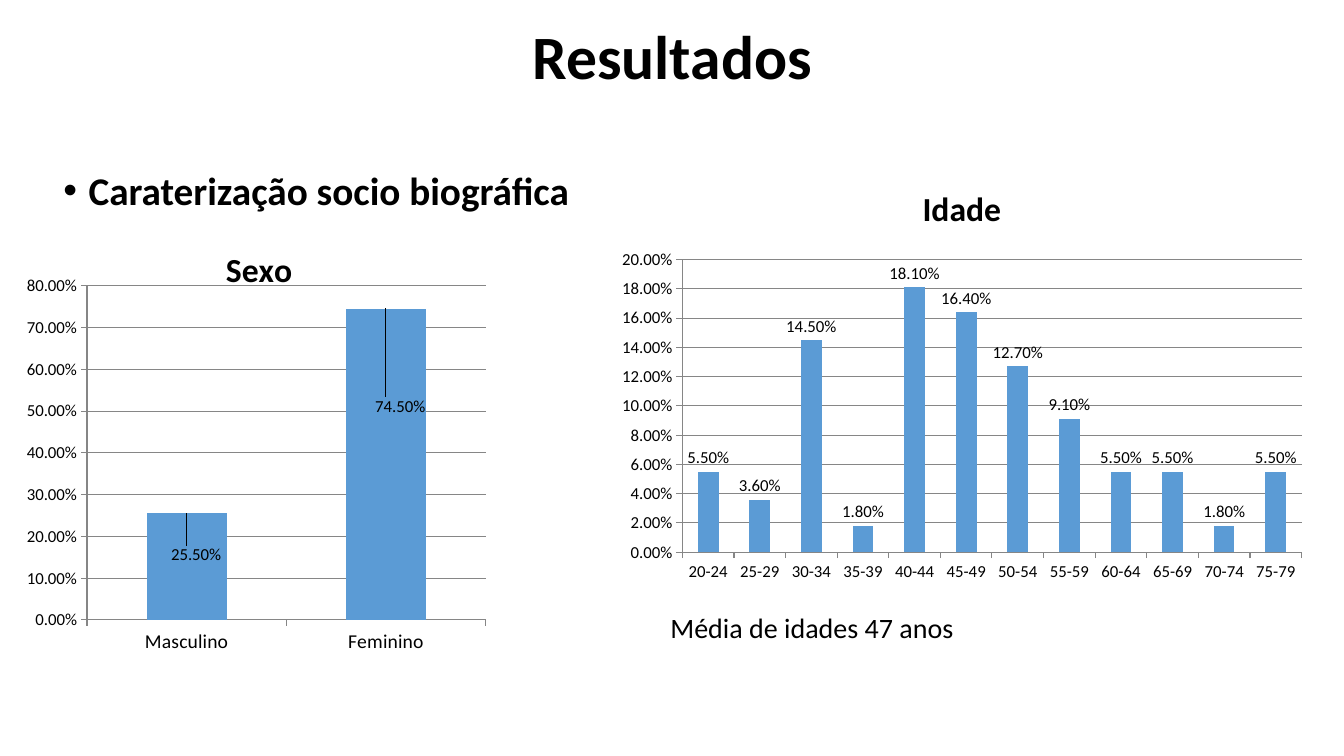
"""Builds the results slide: sex and age charts with a heading and a mean-age note."""
from lxml import etree
from pptx import Presentation, util as u
from pptx.chart.data import CategoryChartData
from pptx.dml.color import RGBColor
from pptx.enum import chart as ch, text
from pptx.oxml import parse_xml
from pptx.oxml.ns import nsdecls, qn

FONT, BLACK, BAR, GRID = "Calibri", "000000", "5B9BD5", "868686"
TITLE = ("Resultados", (0.92, 0.16, 11.5, 0.87), 44, True)
HEADING = ("Caraterização socio biográfica", (0.53, 1.65, 11.88, 0.55), 28, True)
MEAN_AGE = ("Média de idades 47 anos", (6.55, 6.01, 3.37, 0.44), 20, False)
SEX = {
    "title": "Sexo", "box": (0.2, 2.25, 4.74, 4.25), "category_size": 14,
    "values": {"Masculino": 0.255, "Feminino": 0.745},
    "plot": {"x": 0.14, "y": 0.138, "w": 0.834, "h": 0.78},
    "label_shifts": [(0.02, 0.13), (0.03, 0.26)],
}
AGE = {
    "title": "Idade", "box": (6.03, 1.65, 7.02, 4.21), "category_size": 12,
    "values": {"20-24": 0.055, "25-29": 0.036, "30-34": 0.145, "35-39": 0.018,
               "40-44": 0.181, "45-49": 0.164, "50-54": 0.127, "55-59": 0.091,
               "60-64": 0.055, "65-69": 0.055, "70-74": 0.018, "75-79": 0.055},
}


def color(hex_code):
    return RGBColor.from_string(hex_code)


def style(font, size, bold=False):
    font.name, font.size, font.bold = FONT, u.Pt(size), bold
    font.color.rgb = color(BLACK)


def add_text(slide, wording, box, size, bold):
    frame = slide.shapes.add_textbox(*map(u.Inches, box)).text_frame
    frame.word_wrap = True
    line = frame.paragraphs[0]
    line.text = wording
    style(line.font, size, bold)
    return frame, line


def add_bullet(line):
    props = line._p.get_or_add_pPr()
    props.set("marL", str(u.Inches(0.25)))
    props.set("indent", str(-u.Inches(0.25)))
    bullet_font = etree.Element(qn("a:buFont"), typeface="Arial")
    bullet = etree.Element(qn("a:buChar"), char="•")
    default_font = props.find(qn("a:defRPr"))
    for part in (bullet_font, bullet):
        if default_font is None:
            props.append(part)
        else:
            default_font.addprevious(part)


def layout(inner=False, **places):
    target = '<c:layoutTarget val="inner"/>' if inner else ""
    modes = "".join(f'<c:{k}Mode val="edge"/>' for k in "xy") if inner else ""
    sizes = "".join(f'<c:{k} val="{v}"/>' for k, v in places.items())
    return parse_xml(f'<c:layout {nsdecls("c")}><c:manualLayout>{target}{modes}{sizes}'
                     '</c:manualLayout></c:layout>')


def add_bars(slide, title, box, category_size, values, plot=None, label_shifts=()):
    data = CategoryChartData(number_format="0.00%")
    data.categories = list(values)
    data.add_series("Series 1", list(values.values()))
    chart = slide.shapes.add_chart(
        ch.XL_CHART_TYPE.COLUMN_CLUSTERED, *map(u.Inches, box), data).chart
    style(chart.font, 10)
    chart.has_legend = False
    chart.has_title = True
    heading = chart.chart_title.text_frame.paragraphs[0]
    heading.text = title
    style(heading.font, 24, True)
    chart.chart_title.include_in_layout = False

    for axis, size in ((chart.category_axis, category_size), (chart.value_axis, 12)):
        style(axis.tick_labels.font, size)
        axis.major_tick_mark = ch.XL_TICK_MARK.OUTSIDE
        axis.format.line.color.rgb = color(GRID)
    rule = chart.value_axis
    rule.has_major_gridlines = True
    rule.major_gridlines.format.line.color.rgb = color(GRID)
    rule.tick_labels.number_format = "0.00%"
    rule.tick_labels.number_format_is_linked = False

    bars = chart.plots[0]
    bars.gap_width = 150
    bars.vary_by_categories = False
    series = bars.series[0]
    series.format.fill.solid()
    series.format.fill.fore_color.rgb = color(BAR)
    labels = series.data_labels
    labels.show_value = True
    labels.number_format, labels.number_format_is_linked = "0.00%", False
    labels.position = ch.XL_LABEL_POSITION.OUTSIDE_END
    style(labels.font, 12)

    for index, (dx, dy) in enumerate(label_shifts):
        label = series.points[index].data_label
        label.position = ch.XL_LABEL_POSITION.OUTSIDE_END
        style(label.font, 12)
        place = chart.element.xpath(f'.//c:dLbl/c:idx[@val="{index}"]')[0]
        place.addnext(layout(x=dx, y=dy))
    if plot:
        area = chart.element.xpath(".//c:plotArea")[0]
        for automatic in area.findall(qn("c:layout")):
            area.remove(automatic)
        area.insert(0, layout(inner=True, **plot))


def main():
    deck = Presentation()
    deck.slide_width, deck.slide_height = u.Inches(13.33), u.Inches(7.5)
    slide = deck.slides.add_slide(deck.slide_layouts[6])

    frame, line = add_text(slide, *TITLE)
    frame.vertical_anchor = text.MSO_ANCHOR.MIDDLE
    line.alignment = text.PP_ALIGN.CENTER
    line.line_spacing = 0.9
    frame, line = add_text(slide, *HEADING)
    line.line_spacing = 0.9
    add_bullet(line)
    add_bars(slide, **SEX)
    add_bars(slide, **AGE)
    add_text(slide, *MEAN_AGE)
    deck.save("out.pptx")


if __name__ == "__main__":
    main()
